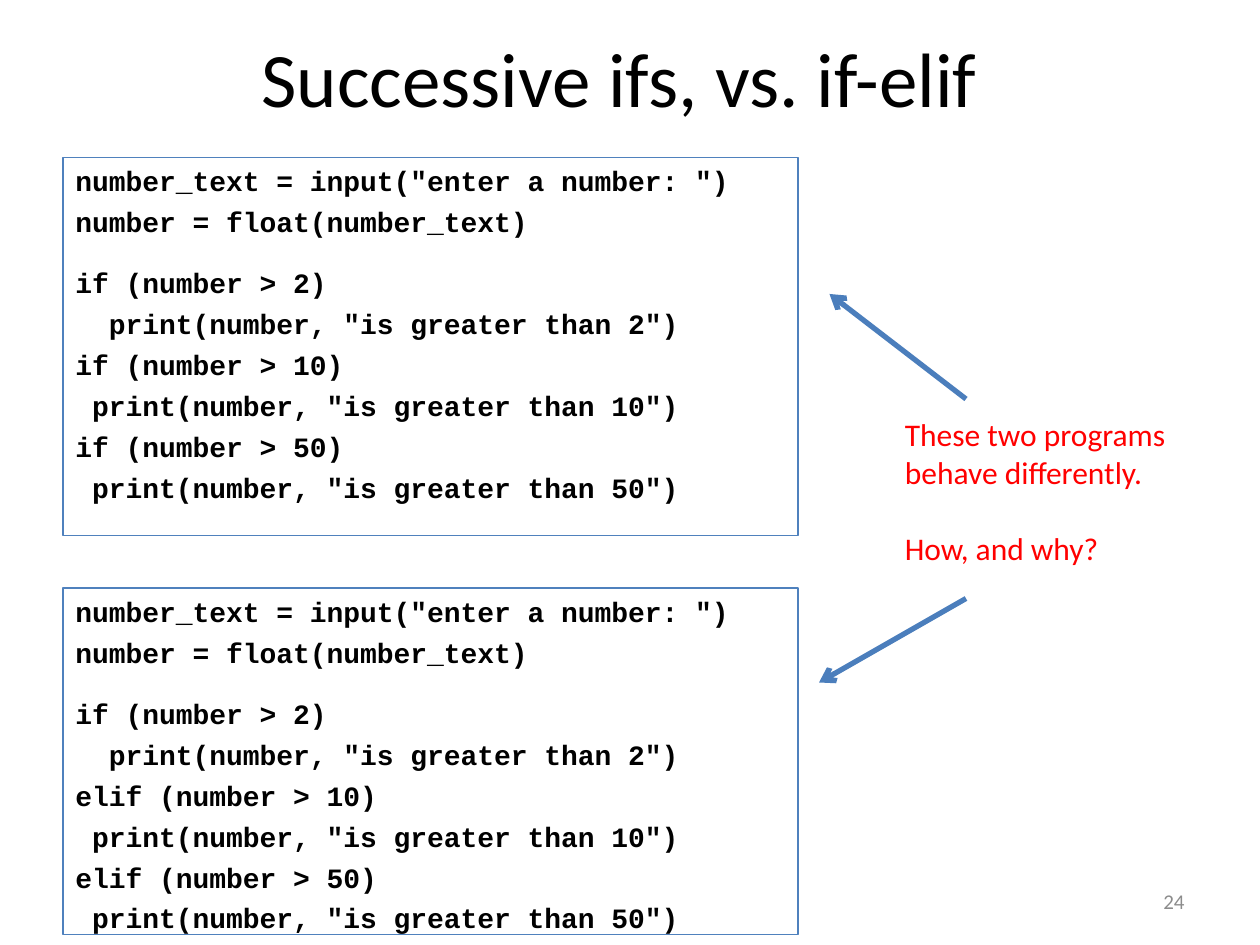
from lxml import etree
from pptx import Presentation
from pptx import util as u
from pptx.dml.color import RGBColor
from pptx.enum import shapes, text
from pptx.oxml.ns import qn

HUES = {"ink": "000000", "edge": "4F81BD", "arrow": "4B7EBC",
        "note": "FF0000", "page": "8C8C8C"}
HEAD = ['number_text = input("enter a number: ")',
        "number = float(number_text)"]
LIMITS = [2, 10, 50]
LEFT, WIDE = 36, 420


def hue(name):
    return RGBColor.from_string(HUES[name])


def write(frame, lines, size=18, font="Calibri", color="ink", bold=False,
          align="LEFT", anchor="TOP", wrap=True, before=0, gaps=None):
    """Fill a frame, one paragraph a line; gaps maps a line's index to its own space before."""
    frame.word_wrap = wrap
    frame.vertical_anchor = getattr(text.MSO_ANCHOR, anchor)
    for i, line in enumerate(lines):
        para = frame.paragraphs[0] if i == 0 else frame.add_paragraph()
        para.text = line
        para.alignment = getattr(text.PP_ALIGN, align)
        para.space_before = u.Pt((gaps or {}).get(i, before))
        for run in para.runs:
            face = run.font
            face.name, face.size, face.bold = font, u.Pt(size), bold
            face.color.rgb = hue(color)


def program(second):
    """List the code lines, testing each limit after the first with the given keyword."""
    lines = list(HEAD)
    for i, limit in enumerate(LIMITS):
        word, pad = (second, " ") if i else ("if", "  ")
        lines += [f"{word} (number > {limit})",
                  f'{pad}print(number, "is greater than {limit}")']
    return lines


class Deck:
    def __init__(self):
        self.show = Presentation()
        self.show.slide_width, self.show.slide_height = u.Pt(720), u.Pt(540)
        self.slide = self.show.slides.add_slide(self.show.slide_layouts[6])

    def label(self, box, lines, **style):
        shape = self.slide.shapes.add_textbox(*map(u.Pt, box))
        write(shape.text_frame, lines, **style)

    def code(self, top, high, lines):
        shape = self.slide.shapes.add_shape(
            shapes.MSO_SHAPE.RECTANGLE, *map(u.Pt, (LEFT, top, WIDE, high)))
        shape.shadow.inherit = False
        shape.fill.background()
        shape.line.color.rgb = hue("edge")
        shape.line.width = u.Pt(0.75)
        write(shape.text_frame, lines, size=16, font="Courier New", bold=True,
              before=4.2, gaps={len(HEAD): 15.8})

    def arrow(self, start, end):
        line = self.slide.shapes.add_connector(
            shapes.MSO_CONNECTOR.STRAIGHT, *map(u.Pt, start + end))
        line.line.color.rgb = hue("arrow")
        line.line.width = u.Pt(3)
        stroke = line.line._get_or_add_ln()
        etree.SubElement(stroke, qn("a:tailEnd"), type="arrow")
        etree.SubElement(line._element.spPr, qn("a:effectLst"))


def main():
    deck = Deck()
    deck.label((30, 3.6, 648, 80.6), ["Successive ifs, vs. if-elif"],
               size=44, align="CENTER", anchor="MIDDLE")
    deck.code(90, 216, program("if"))
    deck.code(336, 198, program("elif"))
    deck.label((510, 233.5, 169, 94.5),
               ["These two programs\vbehave differently.", "How, and why?"],
               color="note", wrap=False, gaps={1: 22})
    deck.arrow((552, 228), (474, 168))
    deck.arrow((552, 342), (468, 390))
    deck.label((516, 500.5, 168, 28.8), ["24"], size=12, color="page",
               align="RIGHT", anchor="MIDDLE")
    deck.show.save("out.pptx")


if __name__ == "__main__":
    main()
